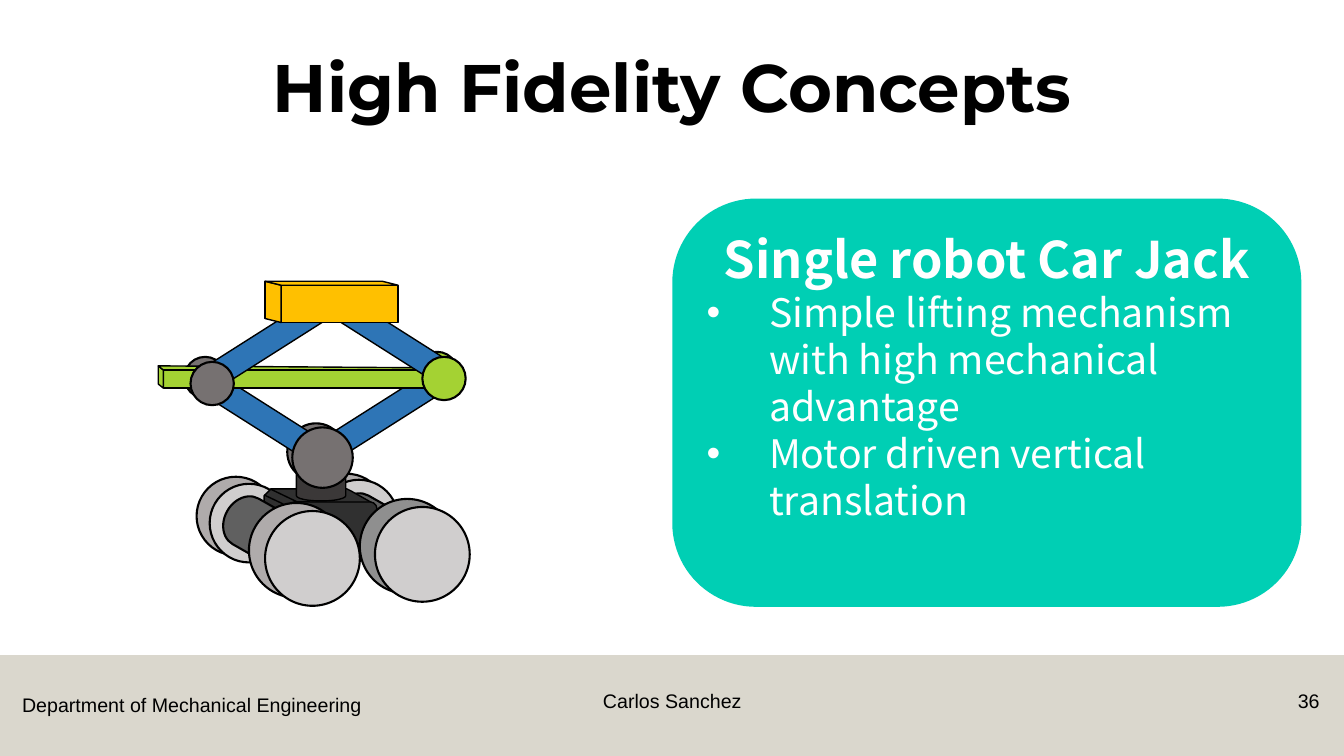
from lxml import etree
from pptx import Presentation
from pptx.dml.color import RGBColor as Rgb
from pptx.enum.shapes import MSO_CONNECTOR as Link, MSO_SHAPE as Kind
from pptx.enum.text import MSO_ANCHOR as Anchor, PP_ALIGN as Align
from pptx.oxml.ns import qn
from pptx.util import Emu, Pt

COLORS = {
    "black": "000000", "white": "FFFFFF", "band": "B7B09C", "teal": "00CFB4",
    "joint": "767171", "lime": "A4D233", "arm": "2E75B6", "gold": "FFC000",
    "rim": "AFABAB", "shade": "8F8F8F", "wheel": "D0CECE",
    "axle": "606060", "hull": "303030", "post": "3B3838",
}
CELL = 91440  # grid of 133.33 columns by 75 rows


def cells(*nums):
    return [Emu(round(n * CELL)) for n in nums]


class Sketch:
    def __init__(self, deck):
        self.slide = deck.slides.add_slide(deck.slide_layouts[6])
        self.home = self.layer = self.slide.shapes

    def group(self):
        """Draw what follows into a new group."""
        self.layer = self.home.add_group_shape().shapes

    def leave(self):
        """Draw what follows straight on the slide."""
        self.layer = self.home

    def paint(self, item, fill, line):
        item.shadow.inherit = False
        item.fill.solid()
        item.fill.fore_color.rgb = Rgb.from_string(COLORS[fill])
        if line:
            item.line.color.rgb = Rgb.from_string(COLORS["black"])
            item.line.width = Pt(line)
        else:
            item.line.fill.background()
        return item

    def shape(self, kind, x, y, w, h, fill, line=1, turn=0):
        item = self.layer.add_shape(kind, *cells(x, y, w, h))
        item.rotation = turn
        return self.paint(item, fill, line)

    def disc(self, x, y, size, fill):
        self.shape(Kind.OVAL, x, y, size, size, fill, 1.5)

    def wheel(self, x, y, size, dx, dy, rim="rim"):
        self.disc(x, y, size, rim)
        self.disc(x + dx, y + dy, size, "wheel")

    def axle(self, x, y):
        self.shape(Kind.FLOWCHART_TERMINATOR, x, y, 13, 5.2, "axle", 1.5, 29.6)

    def arm(self, x, y, turn):
        self.shape(Kind.RECTANGLE, x, y, 13.2, 2.5, "arm", turn=turn)

    def poly(self, points, fill):
        first, *rest = [cells(*p) for p in points]
        pen = self.layer.build_freeform(*first, scale=1.0)
        pen.add_line_segments(rest, close=True)
        self.paint(pen.convert_to_shape(), fill, 1)

    def prism(self, x, y, w, h, dx, dy, fill, drop=0):
        """Box seen from the left and above; drop lowers its far corner."""
        far = (x - dx, y - dy)
        self.shape(Kind.RECTANGLE, x, y, w, h, fill)
        self.poly([far, (x, y), (x, y + h), (x - dx, y + h - dy)], fill)
        self.poly([far, (x + w - dx, y - dy + drop), (x + w, y), (x, y)], fill)

    def edge(self, x1, y1, x2, y2):
        line = self.layer.add_connector(Link.STRAIGHT, *cells(x1, y1, x2, y2))
        line.line.color.rgb = Rgb.from_string(COLORS["black"])
        line.line.width = Pt(1)
        etree.SubElement(line._element.spPr, qn("a:effectLst"))

    def run(self, para, text, size, font, color="black", bold=False):
        run = para.add_run()
        run.text = text
        run.font.size, run.font.name, run.font.bold = Pt(size), font, bold
        run.font.color.rgb = Rgb.from_string(COLORS[color])

    def text(self, x, y, w, h, words, align, size=14, font="Arial",
             bold=False, wrap=True, space=None):
        frame = self.layer.add_textbox(*cells(x, y, w, h)).text_frame
        frame.word_wrap = wrap
        para = frame.paragraphs[0]
        para.alignment, para.line_spacing = align, space
        self.run(para, words, size, font, bold=bold)

    def card(self, x, y, w, h, head, points):
        item = self.shape(Kind.ROUNDED_RECTANGLE, x, y, w, h, "teal", 0)
        item.adjustments[0] = 0.205
        frame = item.text_frame
        frame.word_wrap, frame.vertical_anchor = True, Anchor.TOP
        font = "Noto Sans CJK JP"
        para = frame.paragraphs[0]
        para.alignment = Align.CENTER
        self.run(para, head, 36, font, "white", True)
        for point in points:
            para = frame.add_paragraph()
            para.alignment = Align.LEFT
            props = para._p.get_or_add_pPr()
            indent = cells(6.2)[0]
            props.set("marL", str(indent))
            props.set("indent", str(-indent))
            etree.SubElement(props, qn("a:buFont"), typeface="Arial")
            etree.SubElement(props, qn("a:buChar"), char="•")
            self.run(para, point, 28, font, "white")


def main():
    deck = Presentation()
    deck.slide_width, deck.slide_height = cells(133.33, 75)
    art = Sketch(deck)

    band = art.shape(Kind.RECTANGLE, 0, 65, 133.33, 10, "band", 0)
    tint = band._element.spPr.find(".//" + qn("a:srgbClr"))
    etree.SubElement(tint, qn("a:alpha"), val="50000")
    art.text(1.2, 68.3, 35.9, 3.4, "Department of Mechanical Engineering",
             Align.LEFT, wrap=False)
    art.text(124.2, 67.9, 7.7, 4, "36", Align.RIGHT)
    art.text(44.2, 67.9, 45, 4, "Carlos Sanchez", Align.CENTER)

    # Rear halves of the joints
    art.disc(18.3, 35.4, 4.1, "joint")
    art.disc(41.3, 34.9, 4.1, "lime")
    art.disc(28.5, 42, 5.7, "joint")

    # Rover base
    art.group()
    art.wheel(19.5, 47.3, 7.8, 1.3, 0.7)
    art.wheel(30.5, 47, 7.8, 1.2, 0.6)
    art.axle(32.6, 51)
    art.poly([(26.9, 48.5), (34.4, 48.5), (34.8, 48.7), (37.1, 50),
              (37, 50.6), (37, 53.4), (36.3, 54.1), (28.9, 54.1),
              (28.2, 53.4), (28.2, 52.7), (26.9, 52.7), (26.2, 52),
              (26.2, 49.2)], "hull")
    art.shape(Kind.ROUNDED_RECTANGLE, 28.5, 49.8, 8.9, 4.1, "hull")
    art.axle(21.7, 51.3)
    art.wheel(24.7, 49.9, 9.4, 1.6, 0.8)
    art.edge(26.2, 49.1, 28.1, 50)
    art.edge(26.8, 48.5, 29.5, 49.8)
    art.wheel(35.7, 49.5, 9.4, 1.5, 0.8, "shade")
    art.leave()
    art.shape(Kind.CAN, 29.4, 45.5, 4.9, 4.2, "post")

    art.card(66.7, 19.7, 62.4, 40.5, "Single robot Car Jack", [
        "Simple lifting mechanism with high mechanical advantage",
        "Motor driven vertical translation"])
    art.text(9.2, 4.9, 115, 10.9, "High Fidelity Concepts", Align.CENTER,
             48, "Montserrat", True, space=0.9)

    # Scissor jack
    art.arm(18.9, 39.8, 32.4)
    art.arm(31.5, 39.9, -32.4)
    art.disc(29, 42.4, 6, "joint")
    art.group()
    art.prism(16.2, 36.7, 27.6, 1.8, 0.5, 0.4, "lime", 0.2)
    art.leave()
    art.arm(20.1, 32.6, -32.4)
    art.arm(31.7, 32.1, 32.4)
    art.group()
    art.shape(Kind.RECTANGLE, 26.3, 27.9, 11.6, 3.7, "gold")
    art.prism(27.9, 28.3, 11.6, 3.7, 1.6, 0.4, "gold")
    art.leave()
    art.disc(41.9, 35.4, 4.3, "lime")
    art.disc(18.9, 35.9, 4.3, "joint")

    deck.save("out.pptx")


if __name__ == "__main__":
    main()
